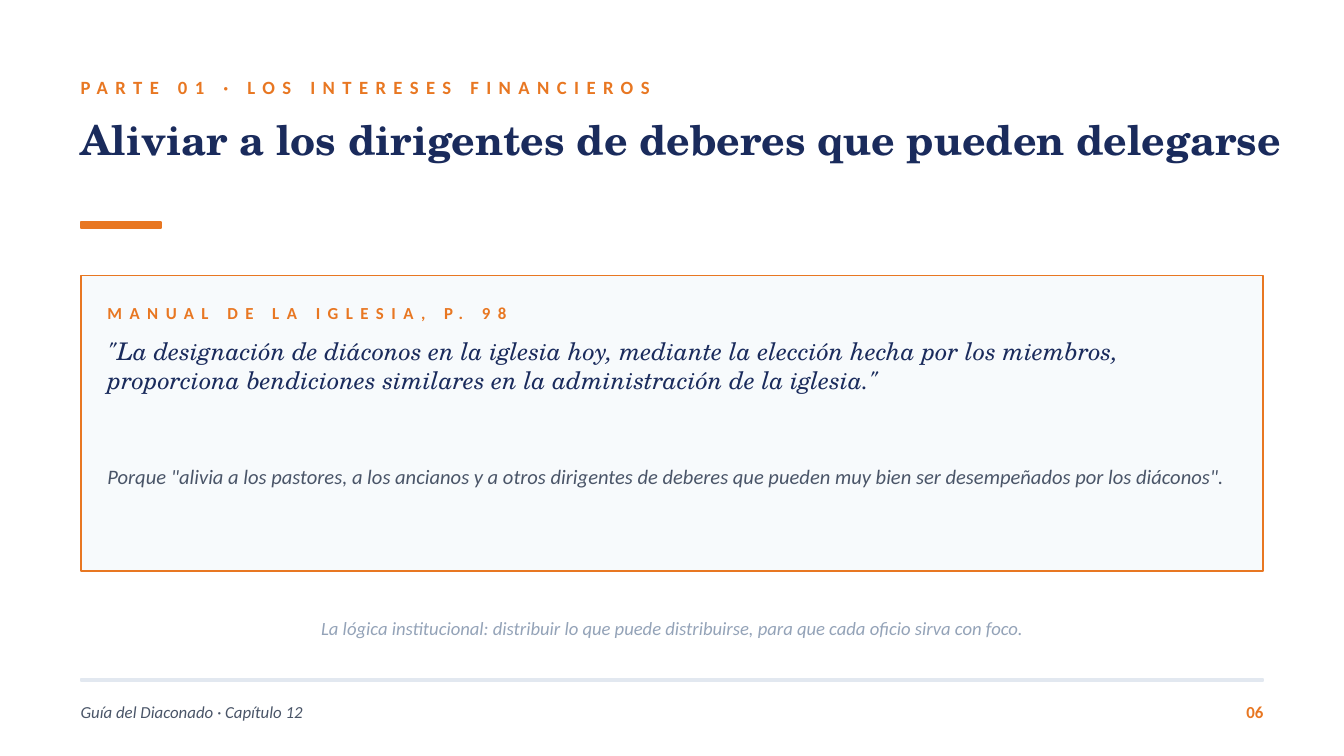
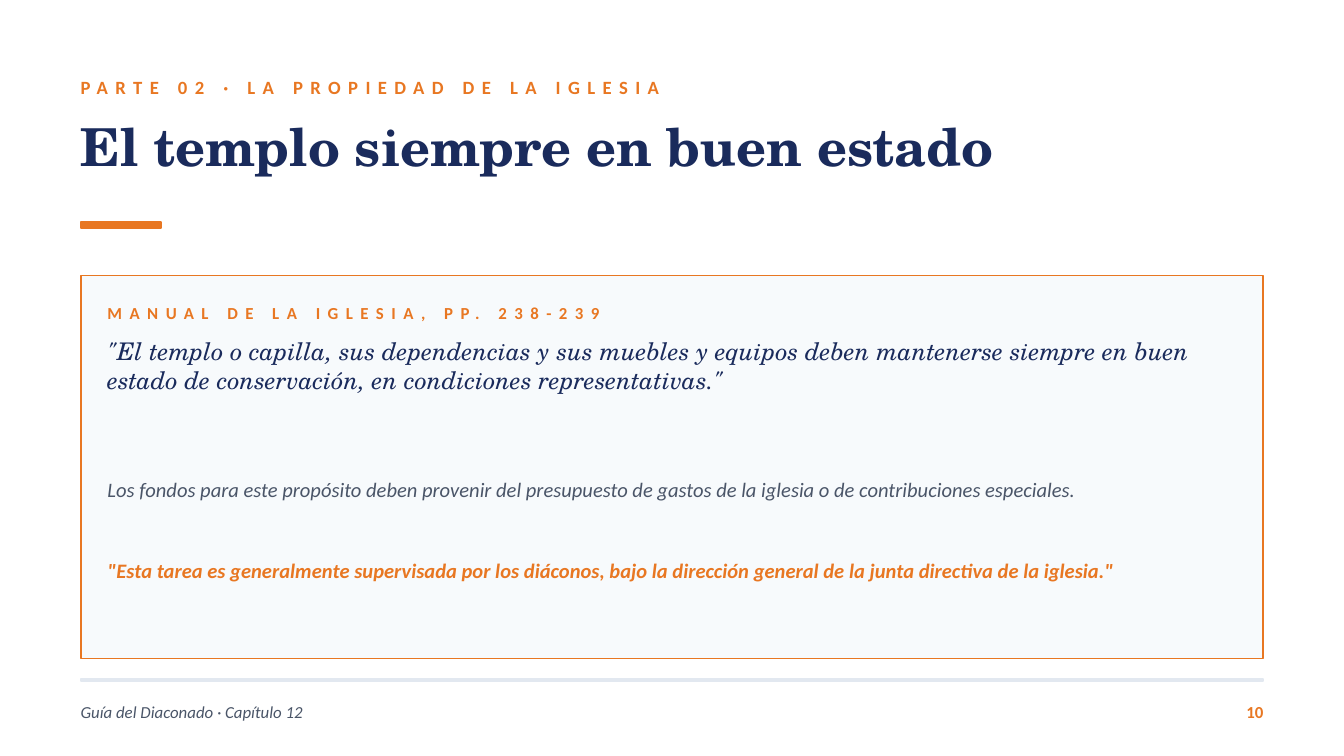
from collections import namedtuple

from pptx import Presentation
from pptx.dml.color import RGBColor
from pptx.enum.shapes import MSO_SHAPE
from pptx.enum.text import MSO_ANCHOR, PP_ALIGN
from pptx.util import Inches, Pt

RECT = MSO_SHAPE.RECTANGLE
TOP, MIDDLE = MSO_ANCHOR.TOP, MSO_ANCHOR.MIDDLE
LEFT, CENTER, RIGHT = PP_ALIGN.LEFT, PP_ALIGN.CENTER, PP_ALIGN.RIGHT

WHITE = RGBColor(0xFF, 0xFF, 0xFF)
ORANGE = RGBColor(0xE8, 0x77, 0x22)
NAVY = RGBColor(0x1A, 0x2B, 0x5C)
SLATE = RGBColor(0x4A, 0x55, 0x68)
MIST = RGBColor(0x94, 0xA3, 0xB8)
PALE = RGBColor(0xF7, 0xFA, 0xFC)
RULE = RGBColor(0xE2, 0xE8, 0xF0)

SANS, SERIF = "Calibri", "TeX Gyre Schola"
WIDE = Inches(10)
TALL = WIDE * 9 // 16
CELL = WIDE / 100  # the slide is a grid of 100 columns of square cells

Box = namedtuple("Box", "x y w h")
HEAD = Box(6, 5, 90, 12)
CARD = Box(6, 20.5, 88, 28.5)
FOOT = Box(6, 50.5, 88, 4)


def place(box):
    return [round(n * CELL) for n in box]


def write(slide, box, text, size, color, font=SANS, bold=False, italic=False,
          track=0, align=LEFT, anchor=TOP):
    frame = slide.shapes.add_textbox(*place(box)).text_frame
    frame.word_wrap = True
    frame.vertical_anchor = anchor
    frame.margin_left = frame.margin_right = 0
    frame.margin_top = frame.margin_bottom = 0
    para = frame.paragraphs[0]
    para.alignment = align
    run = para.add_run()
    run.text = text
    run.font.name = font
    run.font.size = Pt(size)
    run.font.bold = bold
    run.font.italic = italic
    run.font.color.rgb = color
    if track:
        run.font._element.set("spc", str(track * 100))


def block(slide, box, fill, line):
    shape = slide.shapes.add_shape(RECT, *place(box))
    shape.shadow.inherit = False
    shape.fill.solid()
    shape.fill.fore_color.rgb = fill
    shape.line.color.rgb = line
    shape.line.width = Pt(1)


def label(slide, box, text, size):
    """Spaced orange capitals above a title or a quote."""
    write(slide, box, text, size, ORANGE, bold=True, track=4, anchor=MIDDLE)


def header(slide, box, part, title, size):
    label(slide, Box(box.x, box.y, 70, 3), part, 10)
    write(slide, Box(box.x, box.y + 3.5, box.w, 7), title, size, NAVY,
          font=SERIF, bold=True)
    block(slide, Box(box.x, box.y + 11.5, 6, 0.5), ORANGE, ORANGE)


def card(slide, box, source, quote, rows, notes):
    """Quote of the given height, then notes stacked below it at equal gaps."""
    block(slide, box, PALE, ORANGE)
    x, w = box.x + 2, box.w - 4
    label(slide, Box(x, box.y + 1.5, 60, 2.5), source, 9)
    y = box.y + 4.5
    write(slide, Box(x, y, w, rows), quote, 13, NAVY, font=SERIF, italic=True)
    y += rows + 0.5
    for text, high, color, bold in notes:
        write(slide, Box(x, y, w, high), text, 11, color, bold=bold, italic=True)
        y += high + 0.5


def footer(slide, box, page):
    block(slide, Box(box.x, box.y, box.w, 0.2), RULE, RULE)
    y = box.y + 1
    write(slide, Box(box.x, y, 60, 3), "Guía del Diaconado · Capítulo 12", 9,
          SLATE, italic=True, anchor=MIDDLE)
    write(slide, Box(box.x + box.w - 5, y, 5, 3), page, 9, ORANGE, bold=True,
          align=RIGHT, anchor=MIDDLE)


def page(deck, number, head, body, high=CARD.h, moral=None):
    """One quote slide; a moral, if any, is centred under the card."""
    slide = deck.slides.add_slide(deck.slide_layouts[6])
    slide.background.fill.solid()
    slide.background.fill.fore_color.rgb = WHITE
    header(slide, HEAD, *head)
    box = CARD._replace(h=high)
    card(slide, box, *body)
    if moral:
        write(slide, Box(box.x, box.y + high + 2, box.w, 4.5), moral, 10, MIST,
              italic=True, align=CENTER, anchor=MIDDLE)
    footer(slide, FOOT, number)


def main():
    deck = Presentation()
    deck.slide_width, deck.slide_height = WIDE, TALL
    page(
        deck, "06",
        ("PARTE 01 · LOS INTERESES FINANCIEROS",
         "Aliviar a los dirigentes de deberes que pueden delegarse", 22),
        ("MANUAL DE LA IGLESIA, P. 98",
         '"La designación de diáconos en la iglesia hoy, mediante la elección '
         'hecha por los miembros, proporciona bendiciones similares en la '
         'administración de la iglesia."', 9,
         [('Porque "alivia a los pastores, a los ancianos y a otros dirigentes '
           'de deberes que pueden muy bien ser desempeñados por los diáconos".',
           7.5, SLATE, False)]),
        high=22,
        moral="La lógica institucional: distribuir lo que puede distribuirse, "
              "para que cada oficio sirva con foco.",
    )
    page(
        deck, "10",
        ("PARTE 02 · LA PROPIEDAD DE LA IGLESIA",
         "El templo siempre en buen estado", 28),
        ("MANUAL DE LA IGLESIA, PP. 238-239",
         '"El templo o capilla, sus dependencias y sus muebles y equipos deben '
         'mantenerse siempre en buen estado de conservación, en condiciones '
         'representativas."', 10,
         [("Los fondos para este propósito deben provenir del presupuesto de "
           "gastos de la iglesia o de contribuciones especiales.",
           5.5, SLATE, False),
          ('"Esta tarea es generalmente supervisada por los diáconos, bajo la '
           'dirección general de la junta directiva de la iglesia."',
           6.5, ORANGE, True)]),
    )
    deck.save("out.pptx")


if __name__ == "__main__":
    main()
